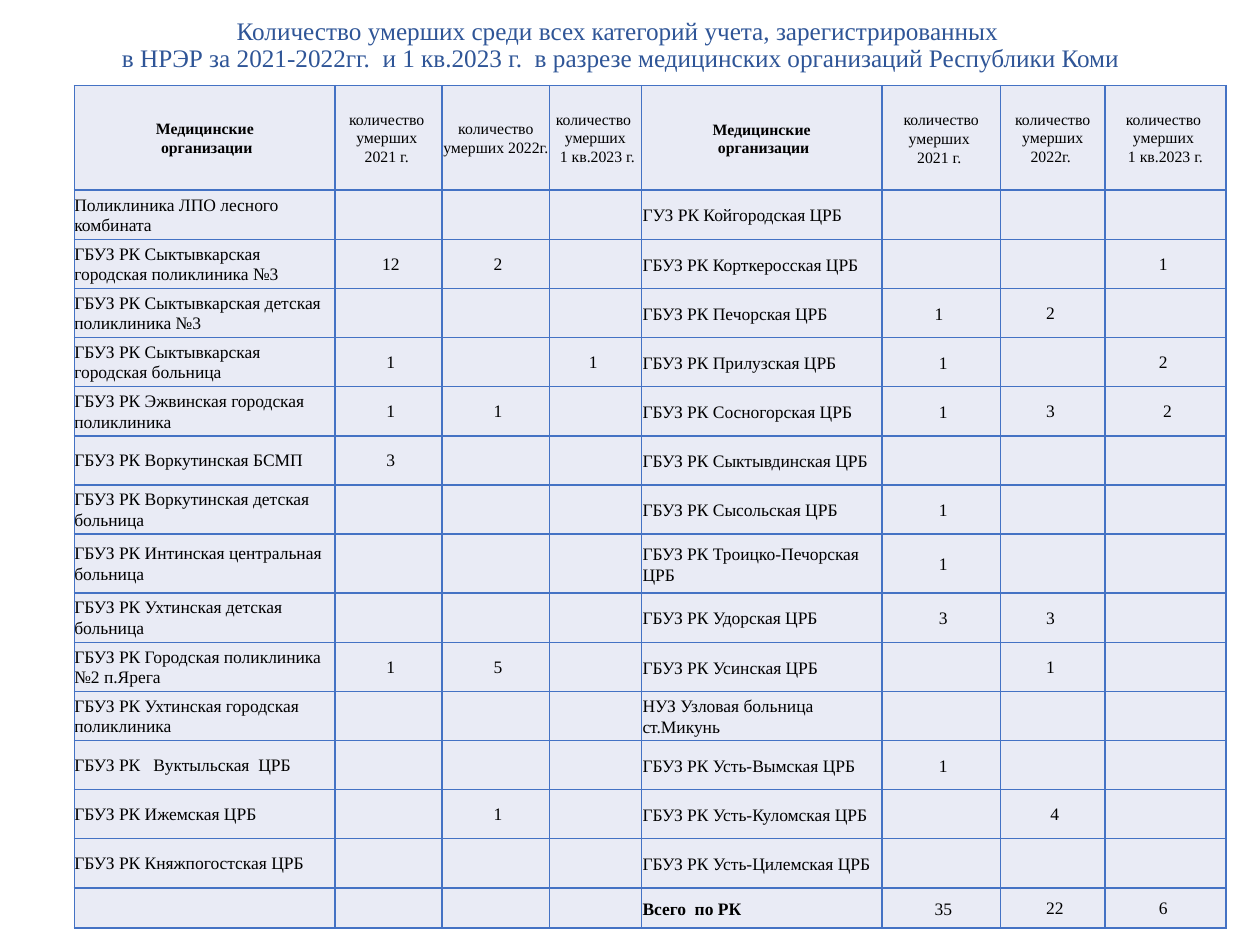
"""Build a slide with a table of deaths by medical organisation."""
import dataclasses

import lxml.etree
import pptx
import pptx.dml.color
import pptx.enum.text
import pptx.oxml.ns
import pptx.util

Inches = pptx.util.Inches
Pt = pptx.util.Pt
Align = pptx.enum.text.PP_ALIGN
Anchor = pptx.enum.text.MSO_ANCHOR
qn = pptx.oxml.ns.qn


@dataclasses.dataclass(frozen=True)
class Theme:
    font: str = "Times New Roman"
    title: str = "2F5597"
    text: str = "000000"
    fill: str = "E9EBF5"
    line: str = "4472C4"
    border: float = 1
    large: float = 14.4
    head: float = 9
    body: float = 10


TITLE = ("Количество умерших среди всех категорий учета, зарегистрированных\v"
         " в НРЭР за 2021-2022гг.  и 1 кв.2023 г.  в разрезе медицинских организаций Республики Коми")
ORG = "Медицинские\n организации"
YEAR = " количество  умерших 2022г. "
HEAD = [ORG, "количество  умерших \n2021 г. ", YEAR, "количество  умерших\n 1 кв.2023 г.",
        ORG, "количество умерших \n2021 г. ", YEAR, "количество  умерших \n1 кв.2023 г."]
TOTAL = "Всего  по РК"
ROWS = [
    ["Поликлиника ЛПО лесного комбината", "", "", "", "ГУЗ РК Койгородская ЦРБ", "", "", ""],
    ["ГБУЗ РК Сыктывкарская городская поликлиника №3", " 12", " 2", "",
     "ГБУЗ РК Корткеросская ЦРБ", "", "", "1 "],
    ["ГБУЗ РК Сыктывкарская детская поликлиника №3", "", "", "",
     "ГБУЗ РК Печорская ЦРБ", "1 ", "2 ", ""],
    ["ГБУЗ РК Сыктывкарская городская больница", " 1", "", "1 ",
     "ГБУЗ РК Прилузская ЦРБ", " 1", "", "2 "],
    ["ГБУЗ РК Эжвинская городская поликлиника", " 1", " 1", "",
     "ГБУЗ РК Сосногорская ЦРБ", " 1", "3 ", " 2"],
    ["ГБУЗ РК Воркутинская БСМП", " 3", "", "", "ГБУЗ РК Сыктывдинская ЦРБ", "", "", ""],
    ["ГБУЗ РК Воркутинская детская больница", "", "", "",
     "ГБУЗ РК Сысольская ЦРБ", " 1", "", ""],
    ["ГБУЗ РК Интинская центральная больница", "", "", "",
     "ГБУЗ РК Троицко-Печорская ЦРБ", " 1", "", ""],
    ["ГБУЗ РК Ухтинская детская больница", "", "", "", "ГБУЗ РК Удорская ЦРБ", " 3", "3 ", ""],
    ["ГБУЗ РК Городская поликлиника №2 п.Ярега", " 1", " 5", "",
     "ГБУЗ РК Усинская ЦРБ", "", "1 ", ""],
    ["ГБУЗ РК Ухтинская городская поликлиника", "", "", "",
     "НУЗ Узловая больница ст.Микунь", "", "", ""],
    ["ГБУЗ РК   Вуктыльская  ЦРБ", "", "", "", "ГБУЗ РК Усть-Вымская ЦРБ", " 1", "", ""],
    ["ГБУЗ РК Ижемская ЦРБ", "", " 1", "", "ГБУЗ РК Усть-Куломская ЦРБ", "", " 4", ""],
    ["ГБУЗ РК Княжпогостская ЦРБ", "", "", "", "ГБУЗ РК Усть-Цилемская ЦРБ", "", "", ""],
    ["", "", "", "", TOTAL, " 35", " 22", "6 "],
]
WIDTHS = [2.07, 0.85, 0.85, 0.73, 1.91, 0.94, 0.83, 0.96]
HEIGHTS = [0.83] + [0.39] * 7 + [0.47] + [0.39] * 6 + [0.32]
NAMES = (0, 4)
INSET = (4, 5)


def write(frame, text, font, size, color, bold=False, align=Align.LEFT, space=1.07):
    for num, line in enumerate(text.split("\n")):
        para = frame.add_paragraph() if num else frame.paragraphs[0]
        para.alignment = align
        para.line_spacing = space
        for pos, part in enumerate(line.split("\v")):
            if pos:
                para.add_line_break()
            if not part:
                end = lxml.etree.SubElement(para._p, qn("a:endParaRPr"))
                end.set("sz", str(int(size * 100)))
                continue
            run = para.add_run()
            run.text = part
            run.font.name = font
            run.font.size = Pt(size)
            run.font.bold = bold
            run.font.color.rgb = pptx.dml.color.RGBColor.from_string(color)


class Page:
    def __init__(self, slide, theme):
        self.slide = slide
        self.theme = theme

    def title(self, text, left, top, width, height):
        look = self.theme
        shape = self.slide.shapes.title
        shape.left, shape.top = Inches(left), Inches(top)
        shape.width, shape.height = Inches(width), Inches(height)
        frame = shape.text_frame
        frame.word_wrap = True
        frame.auto_size = pptx.enum.text.MSO_AUTO_SIZE.NONE
        frame.vertical_anchor = Anchor.MIDDLE
        write(frame, text, look.font, look.large, look.title, align=Align.CENTER, space=0.9)

    def border(self, cell):
        props = cell._tc.get_or_add_tcPr()
        for side in ("a:lnL", "a:lnR", "a:lnT", "a:lnB"):
            line = lxml.etree.SubElement(props, qn(side), w=str(Pt(self.theme.border)))
            fill = lxml.etree.SubElement(line, qn("a:solidFill"))
            lxml.etree.SubElement(fill, qn("a:srgbClr"), val=self.theme.line)

    def cell(self, cell, text, row, col):
        look = self.theme
        edge = Inches(0.01 if col in INSET else 0)
        cell.margin_left = cell.margin_right = cell.margin_top = edge
        cell.margin_bottom = 0
        cell.vertical_anchor = Anchor.MIDDLE
        self.border(cell)
        cell.fill.solid()
        cell.fill.fore_color.rgb = pptx.dml.color.RGBColor.from_string(look.fill)
        head = row == 0
        name = col in NAMES
        write(cell.text_frame, text, look.font, look.head if head else look.body, look.text,
              bold=head and name or text == TOTAL,
              align=Align.LEFT if name and not head else Align.CENTER)

    def table(self, rows, left, top):
        shape = self.slide.shapes.add_table(
            len(rows), len(WIDTHS), Inches(left), Inches(top),
            Inches(sum(WIDTHS)), Inches(sum(HEIGHTS)))
        grid = shape.table
        grid.first_row = grid.horz_banding = False
        for col, width in zip(grid.columns, WIDTHS):
            col.width = Inches(width)
        for row, height in zip(grid.rows, HEIGHTS):
            row.height = Inches(height)
        for row, texts in enumerate(rows):
            for col, text in enumerate(texts):
                self.cell(grid.cell(row, col), text, row, col)


def main():
    deck = pptx.Presentation()
    deck.slide_width, deck.slide_height = Inches(10), Inches(7.5)
    page = Page(deck.slides.add_slide(deck.slide_layouts[5]), Theme())
    page.title(TITLE, 0.59, 0.13, 8.62, 0.47)
    page.table([HEAD] + ROWS, 0.59, 0.68)
    deck.save("out.pptx")


if __name__ == "__main__":
    main()
